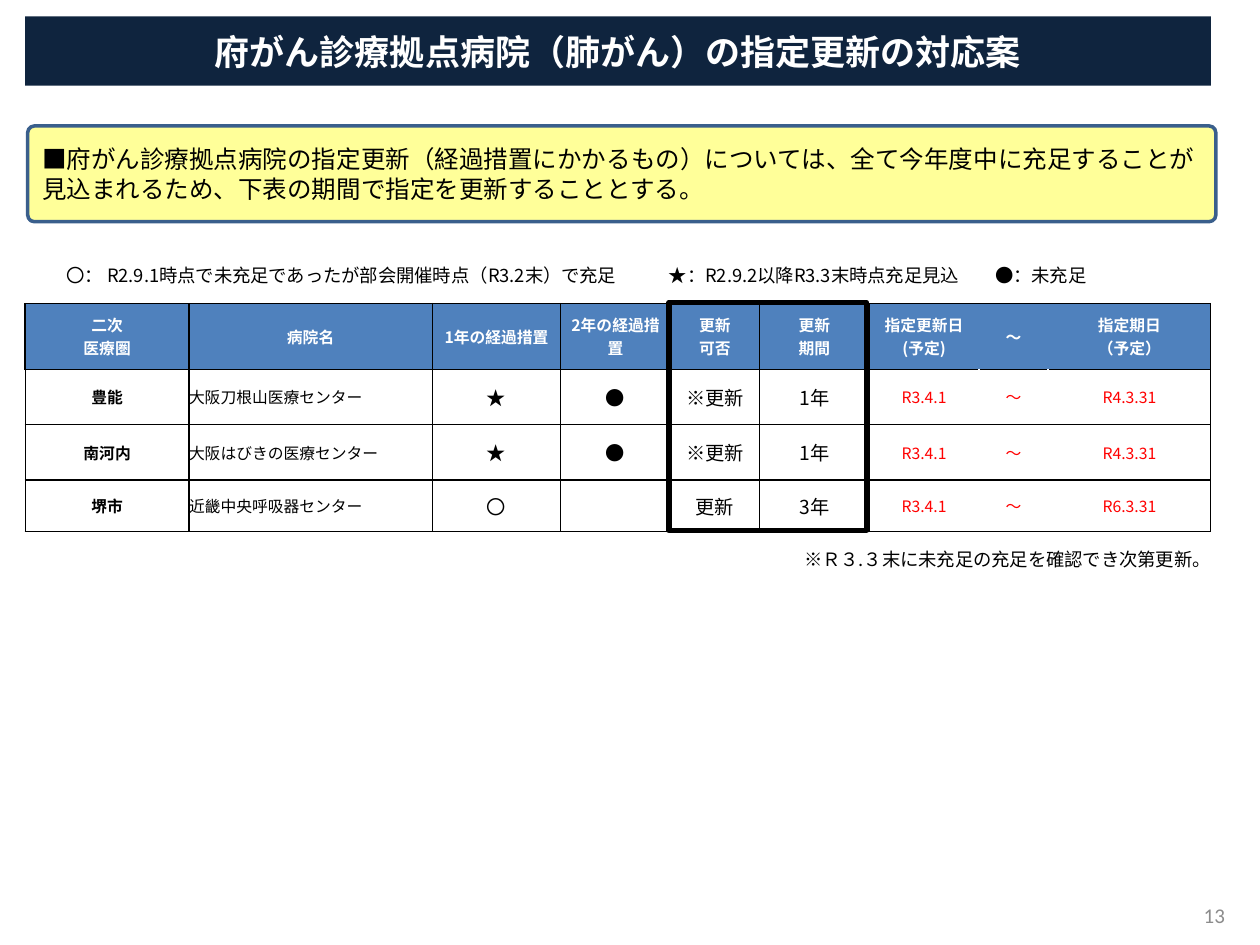
from dataclasses import dataclass
from typing import NamedTuple, Optional

from lxml.etree import SubElement
from pptx import Presentation
from pptx.dml.color import RGBColor
from pptx.enum.shapes import MSO_SHAPE
from pptx.enum.text import MSO_ANCHOR, PP_ALIGN
from pptx.oxml.ns import qn
from pptx.util import Inches, Pt


@dataclass(frozen=True)
class Theme:
    font: str = "Noto Sans CJK JP"
    number_font: str = "Calibri"
    black: str = "000000"
    white: str = "FFFFFF"
    red: str = "FF0000"
    grey: str = "8C8C8C"
    navy: str = "0F243E"
    header_blue: str = "4F81BD"
    yellow: str = "FFFF99"
    outline_blue: str = "3A5F8C"
    title_size: float = 20
    lead_size: float = 14
    page_size: float = 12
    mark_size: float = 11
    note_size: float = 10.5
    cell_size: float = 9


THEME = Theme()


class Box(NamedTuple):
    left: float
    top: float
    width: float
    height: float

    def lengths(self) -> list:
        return [Inches(value) for value in self]


class Style(NamedTuple):
    size: float
    color: str = THEME.black
    bold: bool = False
    align: PP_ALIGN = PP_ALIGN.LEFT
    font: str = THEME.font


class Edge(NamedTuple):
    color: str
    width: float


class Hospital(NamedTuple):
    area: str
    name: str
    one_year: str
    two_year: str
    decision: str
    term: str
    renewed: str
    until: str
    expires: str


def write(frame, text: str, style: Style, anchor=MSO_ANCHOR.MIDDLE) -> None:
    """Fill a text frame, one paragraph per line of text."""
    frame.word_wrap = True
    frame.vertical_anchor = anchor
    for index, line in enumerate(text.split("\n")):
        paragraph = frame.paragraphs[0] if index == 0 else frame.add_paragraph()
        paragraph.alignment = style.align
        run = paragraph.add_run()
        run.text = line
        run.font.size = Pt(style.size)
        run.font.bold = style.bold
        run.font.name = style.font
        run.font.color.rgb = RGBColor.from_string(style.color)
        SubElement(run.font._element, qn("a:ea"), typeface=style.font)


def add_panel(slide, kind, box: Box, fill: Optional[str], edge: Optional[Edge]):
    panel = slide.shapes.add_shape(kind, *box.lengths())
    panel.shadow.inherit = False
    if fill:
        panel.fill.solid()
        panel.fill.fore_color.rgb = RGBColor.from_string(fill)
    else:
        panel.fill.background()
    if edge:
        panel.line.color.rgb = RGBColor.from_string(edge.color)
        panel.line.width = Pt(edge.width)
    else:
        panel.line.fill.background()
    return panel


def add_label(slide, box: Box, text: str, style: Style, anchor=MSO_ANCHOR.TOP):
    label = slide.shapes.add_textbox(*box.lengths())
    write(label.text_frame, text, style, anchor)
    return label


def set_border(cell, side: str, edge: Optional[Edge]) -> None:
    width = Pt(edge.width) if edge else 0
    line = SubElement(cell._tc.get_or_add_tcPr(), qn(f"a:ln{side}"), w=str(int(width)))
    if edge:
        fill = SubElement(line, qn("a:solidFill"))
        SubElement(fill, qn("a:srgbClr"), val=edge.color)
    else:
        SubElement(line, qn("a:noFill"))


# Table content
HEADINGS = Hospital("二次\n医療圏", "病院名", "1年の経過措置", "2年の経過措置", "更新\n可否",
                    "更新\n期間", "指定更新日\n(予定)", "～", "指定期日\n（予定）")
HOSPITALS = [
    Hospital("豊能", "大阪刀根山医療センター", "★", "●", "※更新", "1年", "R3.4.1", "～", "R4.3.31"),
    Hospital("南河内", "大阪はびきの医療センター", "★", "●", "※更新", "1年", "R3.4.1", "～", "R4.3.31"),
    Hospital("堺市", "近畿中央呼吸器センター", "〇", "", "更新", "3年", "R3.4.1", "～", "R6.3.31"),
]
COLUMN_WIDTHS = [1.3, 1.93, 1.02, 0.87, 0.71, 0.87, 0.87, 0.55, 1.29]
ROW_HEIGHTS = [0.52, 0.44, 0.44, 0.41]
HEADING_MARGIN = 0.04
FIRST_DATE, LAST_DATE = 6, 8

CENTER = PP_ALIGN.CENTER
HEADING = Style(THEME.cell_size, THEME.white, True, CENTER)
MARK = Style(THEME.mark_size, align=CENTER)
DATE = Style(THEME.cell_size, THEME.red, align=CENTER)
BODY_STYLES = ([Style(THEME.cell_size, bold=True, align=CENTER), Style(THEME.cell_size)]
               + [MARK] * 4 + [DATE] * 3)


def cell_edges(row: int, column: int) -> dict:
    """Black grid; the three date columns have no dark lines between them."""
    grid = Edge(THEME.black, 0.75)
    heavy = Edge(THEME.black, 1)
    inner = Edge(THEME.black, 0.5) if row == 0 else grid
    between_dates = None if row == 0 else Edge(THEME.white, 1)
    left = between_dates if column > FIRST_DATE else inner
    right = between_dates if FIRST_DATE <= column < LAST_DATE else inner
    if row == 0 and column in (0, 1):
        left = heavy
    if row == 0 and column in (0, LAST_DATE):
        right = heavy
    return {"L": left, "R": right, "T": heavy if row == 0 else grid, "B": grid}


def add_hospital_table(slide, box: Box) -> None:
    rows = [HEADINGS, *HOSPITALS]
    table = slide.shapes.add_table(len(rows), len(COLUMN_WIDTHS), *box.lengths()).table
    table.first_row = table.horz_banding = False
    for column, width in zip(table.columns, COLUMN_WIDTHS):
        column.width = Inches(width)
    for row, height in zip(table.rows, ROW_HEIGHTS):
        row.height = Inches(height)
    for r, entries in enumerate(rows):
        for c, entry in enumerate(entries):
            cell = table.cell(r, c)
            cell.margin_top = cell.margin_bottom = 0
            cell.margin_left = cell.margin_right = Inches(HEADING_MARGIN if r == 0 else 0)
            cell.vertical_anchor = MSO_ANCHOR.MIDDLE
            for side, edge in cell_edges(r, c).items():
                set_border(cell, side, edge)
            if r == 0:
                cell.fill.solid()
                cell.fill.fore_color.rgb = RGBColor.from_string(THEME.header_blue)
            else:
                cell.fill.background()
            if entry:
                write(cell.text_frame, entry, HEADING if r == 0 else BODY_STYLES[c])


def add_legend(slide, box: Box, entries: list, tab_stops: list) -> None:
    legend = add_label(slide, box, "\t".join(entries), Style(THEME.note_size))
    properties = legend.text_frame.paragraphs[0]._p.get_or_add_pPr()
    tabs = SubElement(properties, qn("a:tabLst"))
    for stop in tab_stops:
        SubElement(tabs, qn("a:tab"), pos=str(int(Inches(stop))), algn="l")


def main() -> None:
    deck = Presentation()
    deck.slide_width, deck.slide_height = Inches(10), Inches(7.5)
    slide = deck.slides.add_slide(deck.slide_layouts[6])

    # Title band
    title = add_panel(slide, MSO_SHAPE.RECTANGLE, Box(0.2, 0.13, 9.41, 0.55), THEME.navy, None)
    title.text_frame.margin_top = title.text_frame.margin_bottom = 0
    write(title.text_frame, "府がん診療拠点病院（肺がん）の指定更新の対応案",
          Style(THEME.title_size, THEME.white, True, CENTER))

    # Table, its footnote ending at the table's right side, and the page number
    add_hospital_table(slide, Box(0.2, 2.41, 9.41, 1.81))
    add_label(slide, Box(6, 4.3, 3.71, 0.28), "※Ｒ３.３末に未充足の充足を確認でき次第更新。",
              Style(THEME.note_size, align=PP_ALIGN.RIGHT))
    add_label(slide, Box(7.57, 7.06, 2.25, 0.4), "13",
              Style(THEME.page_size, THEME.grey, align=PP_ALIGN.RIGHT, font=THEME.number_font),
              MSO_ANCHOR.MIDDLE)

    # Summary of the proposal
    summary = add_panel(slide, MSO_SHAPE.ROUNDED_RECTANGLE, Box(0.22, 1, 9.43, 0.76),
                        THEME.yellow, Edge(THEME.outline_blue, 2))
    summary.adjustments[0] = 0.07
    write(summary.text_frame,
          "■府がん診療拠点病院の指定更新（経過措置にかかるもの）については、全て今年度中に充足することが"
          "見込まれるため、下表の期間で指定を更新することとする。", Style(THEME.lead_size))

    # Frame around the renewal columns, and the legend
    add_panel(slide, MSO_SHAPE.RECTANGLE, Box(5.31, 2.4, 1.57, 1.81), None, Edge(THEME.black, 3))
    add_legend(slide, Box(0.43, 2.05, 9.29, 0.28),
               ["〇： R2.9.1時点で未充足であったが部会開催時点（R3.2末）で充足",
                "★：R2.9.2以降R3.3末時点充足見込", "●：未充足"], [4.78, 7.37])

    deck.save("out.pptx")


if __name__ == "__main__":
    main()
